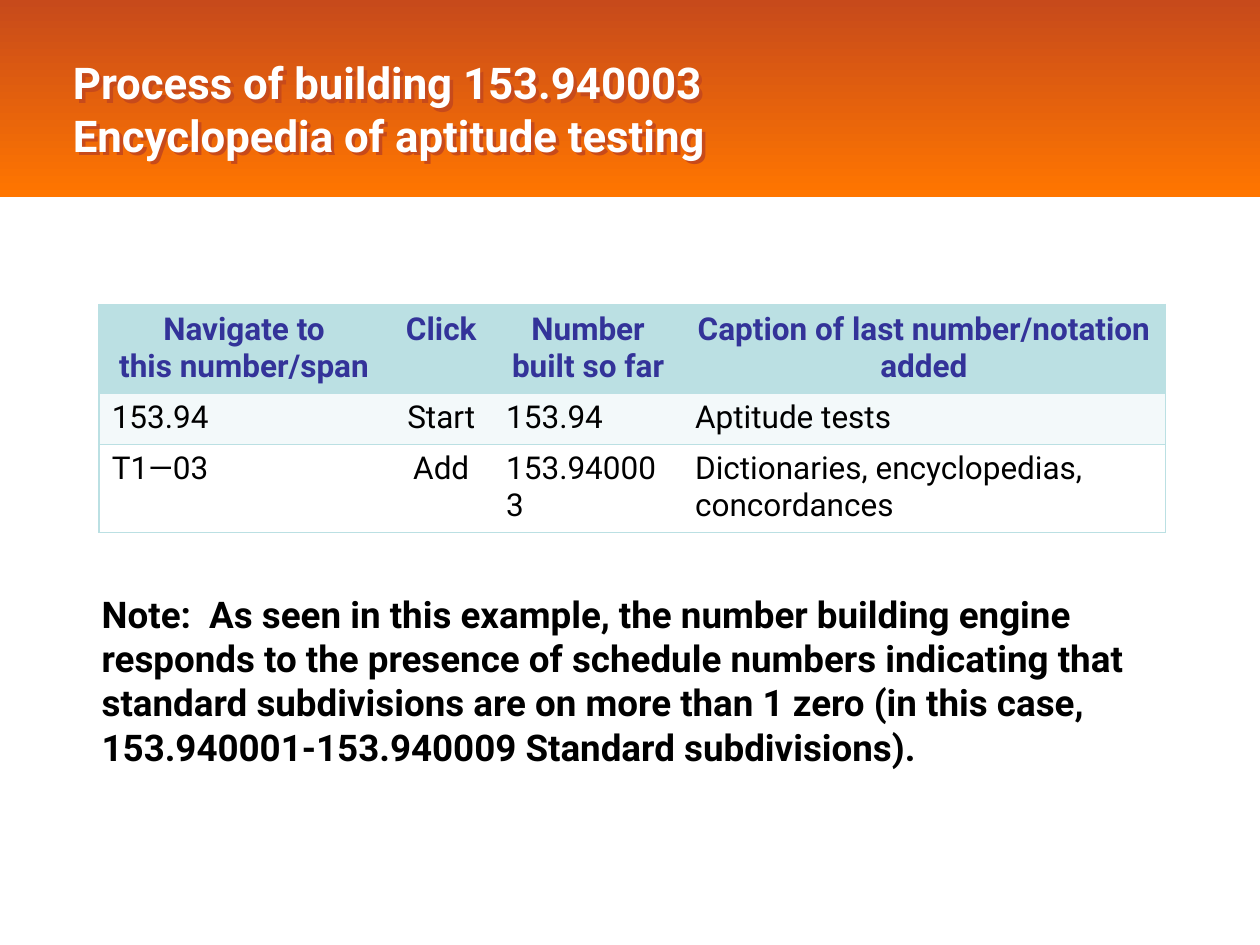
from lxml.etree import SubElement
from pptx import Presentation
from pptx.dml.color import RGBColor
from pptx.enum.shapes import MSO_SHAPE
from pptx.enum.text import MSO_ANCHOR, PP_ALIGN
from pptx.oxml import parse_xml
from pptx.oxml.ns import nsdecls, qn
from pptx.util import Cm, Pt

HUES = {"rust": "C74A1B", "orange": "FF7600", "white": "FFFFFF", "black": "000000",
        "navy": "333399", "teal": "BBE0E3", "pale": "F3F9FA"}
COLS = [5.84, 2.11, 3.81, 9.73]
ROWS = [
    (1.75, "teal", ["Navigate to\nthis number/span", "Click", "Number built so far",
                    "Caption of last number/notation added"]),
    (1.04, "pale", ["153.94", "Start", "153.94", "Aptitude tests"]),
    (1.75, "white", ["T1—03", "Add", "153.940003",
                     "Dictionaries, encyclopedias, concordances"]),
]
TITLE = "Process of building 153.940003\vEncyclopedia of aptitude testing"
NOTE = ("Note:  As seen in this example, the number building engine responds to the "
        "presence of schedule numbers indicating that standard subdivisions are on more "
        "than 1 zero (in this case, 153.940001-153.940009 Standard subdivisions).")


class Deck:
    """Holds the style and the current slide."""

    face = "Roboto"

    def __init__(self):
        self.prs = Presentation()
        self.prs.slide_width, self.prs.slide_height = Cm(25.4), Cm(19.05)
        self.slide = self.prs.slides.add_slide(self.prs.slide_layouts[6])

    def hue(self, name):
        return RGBColor.from_string(HUES[name])

    def style(self, frame, text, size, hue, bold, align=PP_ALIGN.LEFT):
        frame.text = text
        for para in frame.paragraphs:
            para.alignment = align
            font = para.font
            font.name, font.size, font.bold = self.face, Pt(size), bold
            font.color.rgb = self.hue(hue)

    def band(self, box, hues):
        shape = self.slide.shapes.add_shape(MSO_SHAPE.RECTANGLE, *map(Cm, box))
        shape.shadow.inherit = False
        shape.line.fill.background()
        shape.fill.gradient()
        shape.fill.gradient_angle = 270
        for stop, hue in zip(shape.fill.gradient_stops, hues):
            stop.color.rgb = self.hue(hue)

    def text(self, box, text, size, hue, anchor=MSO_ANCHOR.TOP):
        shape = self.slide.shapes.add_textbox(*map(Cm, box))
        frame = shape.text_frame
        frame.word_wrap = True
        frame.vertical_anchor = anchor
        self.style(frame, text, size, hue, True)
        return shape

    def shade(self, shape, hue):
        shape._element.spPr.append(parse_xml(
            f'<a:effectLst {nsdecls("a")}><a:outerShdw dist="35900" dir="2700000" '
            f'algn="ctr" rotWithShape="0"><a:srgbClr val="{HUES[hue]}"/>'
            '</a:outerShdw></a:effectLst>'))

    def edge(self, cell, sides, hue):
        props = cell._tc.get_or_add_tcPr()
        for side in "LRTB":
            shown = side in sides
            line = SubElement(props, qn(f"a:ln{side}"), w="12700" if shown else "0")
            fill = SubElement(line, qn("a:solidFill" if shown else "a:noFill"))
            if shown:
                SubElement(fill, qn("a:srgbClr"), val=HUES[hue])

    def table(self, left, top, cols, rows):
        high = sum(row[0] for row in rows)
        grid = self.slide.shapes.add_table(
            len(rows), len(cols), Cm(left), Cm(top), Cm(sum(cols)), Cm(high)).table
        grid.first_row = grid.horz_banding = False
        for col, width in zip(grid.columns, cols):
            col.width = Cm(width)
        for r, (height, fill, texts) in enumerate(rows):
            grid.rows[r].height = Cm(height)
            head = r == 0
            for c, text in enumerate(texts):
                cell = grid.cell(r, c)
                sides = "TB" + "L" * (c == 0) + "R" * (c == len(cols) - 1)
                self.edge(cell, sides, "teal")
                cell.fill.solid()
                cell.fill.fore_color.rgb = self.hue(fill)
                align = PP_ALIGN.CENTER if head or c == 1 else PP_ALIGN.LEFT
                self.style(cell.text_frame, text, 18, "navy" if head else "black",
                           head, align)

    def save(self):
        self.prs.save("out.pptx")


def main():
    deck = Deck()
    deck.band((0, 0, 25.4, 3.98), ("rust", "orange"))
    title = deck.text((1.22, 0.41, 19.4, 3.56), TITLE, 25, "white", MSO_ANCHOR.MIDDLE)
    deck.shade(title, "rust")
    deck.table(2, 6.14, COLS, ROWS)
    deck.text((1.8, 11.81, 21.8, 3.83), NOTE, 21, "black")
    deck.save()


if __name__ == "__main__":
    main()
